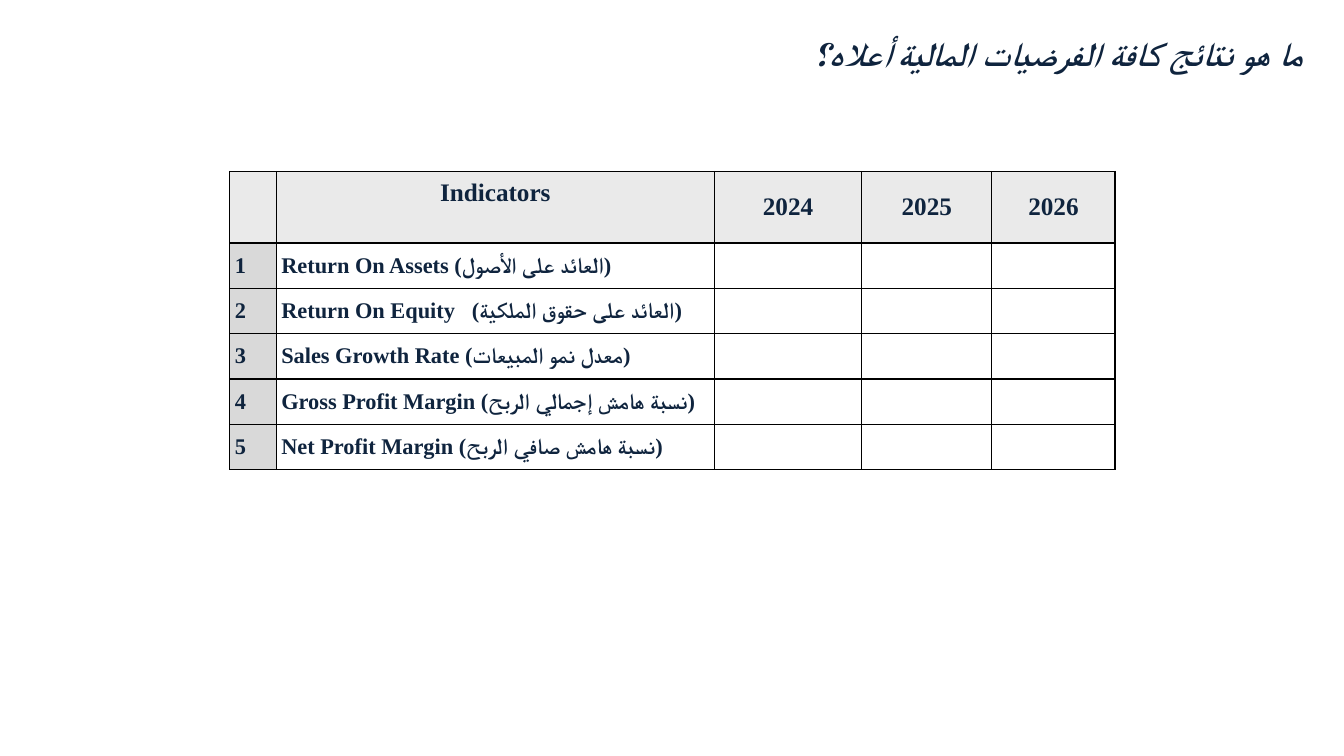
from dataclasses import dataclass

from lxml import etree
from pptx import Presentation
from pptx.dml.color import RGBColor
from pptx.enum.text import MSO_ANCHOR, MSO_AUTO_SIZE, PP_ALIGN
from pptx.oxml.ns import qn
from pptx.util import Inches, Pt

MIDDLE = MSO_ANCHOR.MIDDLE
FIT_SHAPE = MSO_AUTO_SIZE.SHAPE_TO_FIT_TEXT
LEFT, CENTER, JUSTIFY = PP_ALIGN.LEFT, PP_ALIGN.CENTER, PP_ALIGN.JUSTIFY


@dataclass(frozen=True)
class Theme:
    ink: str = "0F243E"
    border: str = "000000"
    header_fill: str = "EAEAEA"
    number_fill: str = "D9D9D9"
    title_font: str = "Arial"
    table_font: str = "Times New Roman"
    title_size: int = 24
    header_size: int = 18
    body_size: int = 16
    border_width: int = 1
    cell_margin: float = 0.05
    raised_margin: float = 0.33


THEME = Theme()
TITLE = "ما هو نتائج كافة الفرضيات المالية أعلاه؟"
HEADINGS = ["", "Indicators", "2024", "2025", "2026"]
INDICATORS = [
    "Return On Assets (العائد على الأصول)",
    "Return On Equity   (العائد على حقوق الملكية)",
    "Sales Growth Rate (معدل نمو المبيعات)",
    "Gross Profit Margin (نسبة هامش إجمالي الربح)",
    "Net Profit Margin (نسبة هامش صافي الربح)",
]
COLUMN_WIDTHS = [0.46, 4.34, 1.46, 1.29, 1.22]
HEADER_HEIGHT = 0.71
BODY_HEIGHT = 0.45


def write_text(paragraph, text, font_name, size, alignment):
    run = paragraph.add_run()
    run.text = text
    paragraph.alignment = alignment
    paragraph.font.name = font_name
    paragraph.font.size = Pt(size)
    paragraph.font.bold = True
    paragraph.font.color.rgb = RGBColor.from_string(THEME.ink)
    run_properties = run._r.get_or_add_rPr()
    for name in ("latin", "cs"):
        etree.SubElement(run_properties, qn(f"a:{name}"), typeface=font_name)
    run.font.size = Pt(size)
    run.font.bold = True
    run.font.color.rgb = RGBColor.from_string(THEME.ink)
    return run


def add_title(slide, left, top, width, height):
    box = slide.shapes.add_textbox(Inches(left), Inches(top), Inches(width), Inches(height))
    frame = box.text_frame
    frame.word_wrap = True
    frame.auto_size = FIT_SHAPE
    paragraph = frame.paragraphs[0]
    run = write_text(paragraph, TITLE, THEME.title_font, THEME.title_size, JUSTIFY)
    run.font.italic = True
    paragraph._p.get_or_add_pPr().set("rtl", "1")


def add_borders(cell):
    properties = cell._tc.get_or_add_tcPr()
    for position, side in enumerate(("lnL", "lnR", "lnT", "lnB")):
        line = etree.Element(qn(f"a:{side}"), w=str(Pt(THEME.border_width)))
        fill = etree.SubElement(line, qn("a:solidFill"))
        etree.SubElement(fill, qn("a:srgbClr"), val=THEME.border)
        properties.insert(position, line)


def format_cell(cell, text, size, alignment, fill):
    margin = Inches(THEME.cell_margin)
    cell.margin_left = cell.margin_right = margin
    cell.margin_top = cell.margin_bottom = margin
    cell.vertical_anchor = MIDDLE
    if fill:
        cell.fill.solid()
        cell.fill.fore_color.rgb = RGBColor.from_string(fill)
    else:
        cell.fill.background()
    add_borders(cell)
    if text:
        write_text(cell.text_frame.paragraphs[0], text, THEME.table_font, size, alignment)


def add_indicator_table(slide, left, top, width):
    rows = [HEADINGS]
    for number, indicator in enumerate(INDICATORS, 1):
        rows.append([str(number), indicator] + [""] * (len(HEADINGS) - 2))
    height = HEADER_HEIGHT + BODY_HEIGHT * len(INDICATORS)
    frame = slide.shapes.add_table(
        len(rows), len(HEADINGS), Inches(left), Inches(top), Inches(width), Inches(height)
    )
    table = frame.table
    table.first_row = False
    table.horz_banding = False
    for column, share in zip(table.columns, COLUMN_WIDTHS):
        column.width = Inches(width * share / sum(COLUMN_WIDTHS))
    for row_index, texts in enumerate(rows):
        is_header = row_index == 0
        table.rows[row_index].height = Inches(HEADER_HEIGHT if is_header else BODY_HEIGHT)
        size = THEME.header_size if is_header else THEME.body_size
        alignment = CENTER if is_header else LEFT
        for column_index, text in enumerate(texts):
            if is_header:
                fill = THEME.header_fill
            else:
                fill = THEME.number_fill if column_index == 0 else None
            format_cell(table.cell(row_index, column_index), text, size, alignment, fill)
    table.cell(0, 1).margin_bottom = Inches(THEME.raised_margin)


def main():
    presentation = Presentation()
    presentation.slide_width = Inches(13.33)
    presentation.slide_height = Inches(7.5)
    slide = presentation.slides.add_slide(presentation.slide_layouts[6])
    add_title(slide, 3.5, 0.28, 9.52, 0.5)
    add_indicator_table(slide, 2.28, 1.7, 8.78)
    presentation.save("out.pptx")


if __name__ == "__main__":
    main()
